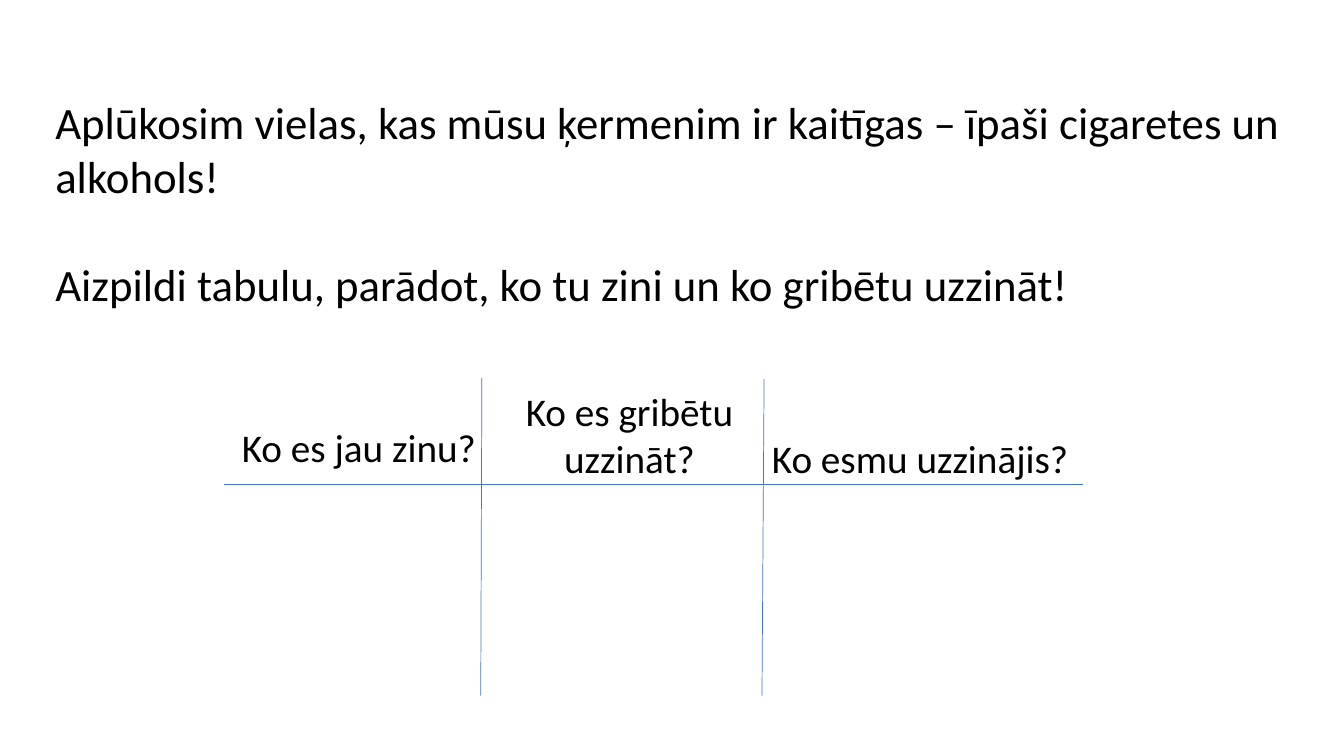
from dataclasses import dataclass

from lxml import etree
from pptx import Presentation
from pptx.dml.color import RGBColor
from pptx.enum import shapes, text
from pptx.oxml import ns
from pptx.slide import Slide
from pptx.util import Pt


@dataclass(frozen=True)
class Theme:
    font: str = "Calibri"
    ink: RGBColor = RGBColor(0x00, 0x00, 0x00)
    rule: RGBColor = RGBColor(0x44, 0x72, 0xC4)
    body_size: float = 32
    heading_size: float = 28
    rule_width: float = 0.5


@dataclass(frozen=True)
class TextBlock:
    left: float
    top: float
    width: float
    height: float
    size: float
    paragraphs: tuple[str, ...]
    gap: float = 0
    wrap: bool = True
    alignment: text.PP_ALIGN = text.PP_ALIGN.LEFT


@dataclass(frozen=True)
class Rule:
    start_x: float
    start_y: float
    end_x: float
    end_y: float


THEME = Theme()

TEXT_BLOCKS = (
    TextBlock(32.4, 64.1, 922.3, 162.7, THEME.body_size, (
        "Aplūkosim vielas, kas mūsu ķermenim ir kaitīgas – īpaši cigaretes un alkohols!",
        "Aizpildi tabulu, parādot, ko tu zini un ko gribētu uzzināt!",
    ), gap=39),
    TextBlock(165.6, 298.8, 200.9, 41, THEME.heading_size, ("Ko es jau zinu?",)),
    TextBlock(343.4, 272.9, 212.4, 74.9, THEME.heading_size,
              ("Ko es gribētu uzzināt?",), alignment=text.PP_ALIGN.CENTER),
    TextBlock(544.3, 306.7, 228.2, 41, THEME.heading_size,
              ("Ko esmu uzzinājis?",), wrap=False),
)

TABLE_RULES = (
    Rule(344.2, 270, 343.4, 496.8),
    Rule(545.8, 270.7, 544.3, 496.8),
    Rule(159.8, 346.3, 773.3, 346.3),
)


def add_rule(slide: Slide, rule: Rule) -> None:
    connector = slide.shapes.add_connector(
        shapes.MSO_CONNECTOR.STRAIGHT,
        Pt(rule.start_x), Pt(rule.start_y), Pt(rule.end_x), Pt(rule.end_y),
    )
    connector.line.color.rgb = THEME.rule
    connector.line.width = Pt(THEME.rule_width)
    etree.SubElement(connector.element.spPr, ns.qn("a:effectLst"))


def add_text_block(slide: Slide, block: TextBlock) -> None:
    shape = slide.shapes.add_textbox(
        Pt(block.left), Pt(block.top), Pt(block.width), Pt(block.height)
    )
    frame = shape.text_frame
    frame.word_wrap = block.wrap
    frame.auto_size = text.MSO_AUTO_SIZE.SHAPE_TO_FIT_TEXT
    font_format = {"name": THEME.font, "size": Pt(block.size)}
    for index, wording in enumerate(block.paragraphs):
        paragraph = frame.add_paragraph() if index else frame.paragraphs[0]
        paragraph.alignment = block.alignment
        if index:
            paragraph.space_before = Pt(block.gap)
        run = paragraph.add_run()
        run.text = wording
        for attribute, value in font_format.items():
            setattr(run.font, attribute, value)
        run.font.color.rgb = THEME.ink


def main() -> None:
    presentation = Presentation()
    presentation.slide_width = Pt(960)
    presentation.slide_height = Pt(540)
    slide = presentation.slides.add_slide(presentation.slide_layouts[6])
    instructions, *headings = TEXT_BLOCKS
    add_text_block(slide, instructions)
    for rule in TABLE_RULES:
        add_rule(slide, rule)
    for heading in headings:
        add_text_block(slide, heading)
    presentation.save("out.pptx")


if __name__ == "__main__":
    main()
